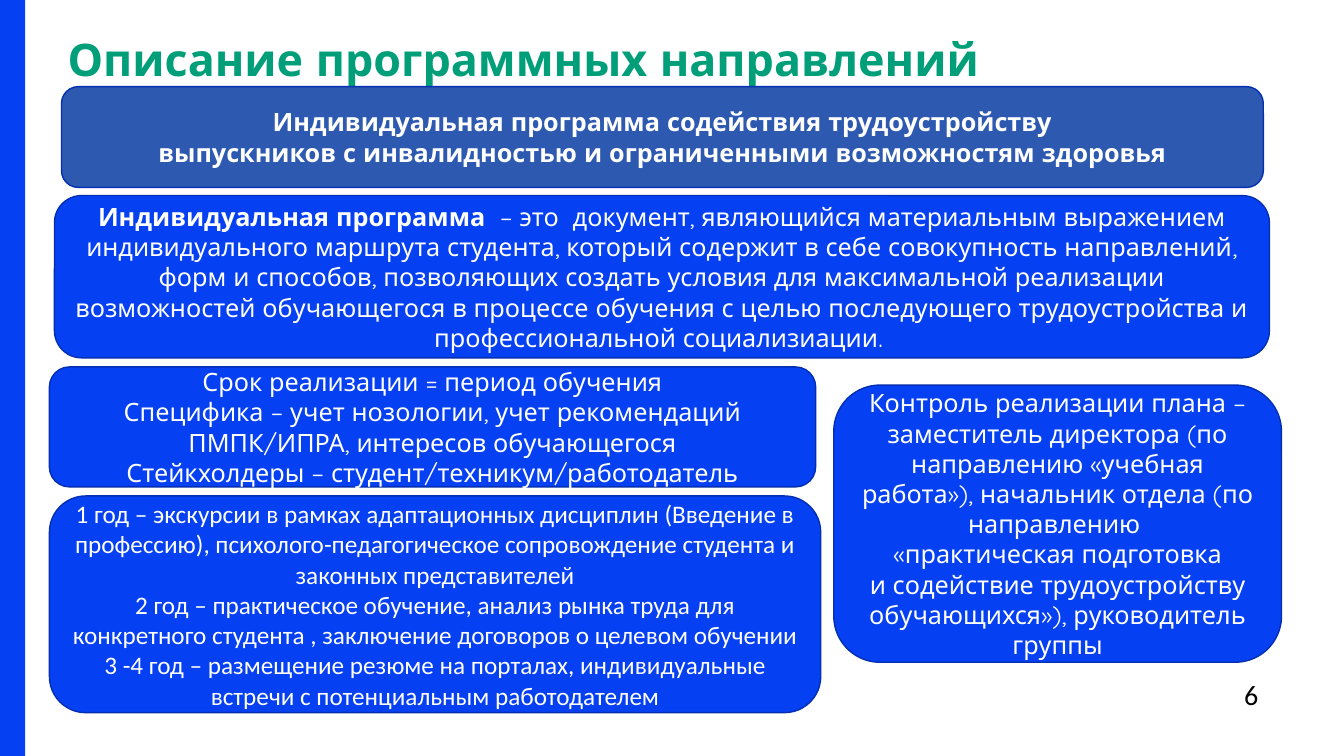
"""Build the slide on the individual employment support programme."""
from pptx import Presentation
from pptx.dml.color import RGBColor
from pptx.enum.shapes import MSO_SHAPE as SHAPE
from pptx.enum.text import MSO_ANCHOR as ANCHOR, PP_ALIGN as ALIGN
from pptx.util import Inches, Pt

BLUE = RGBColor(0x05, 0x40, 0xF2)
STEEL = RGBColor(0x2D, 0x59, 0xB0)
NAVY = RGBColor(0x04, 0x2F, 0xB3)
GREEN = RGBColor(0x00, 0x9F, 0x79)
WHITE = RGBColor(0xFF, 0xFF, 0xFF)
BLACK = RGBColor(0x00, 0x00, 0x00)
HEADING = "Quicksand"
BODY = "Calibri"


def add_run(p, text, font, size, color, bold=False):
    r = p.add_run()
    r.text = text
    for name, value in {"name": font, "size": Pt(size), "bold": bold}.items():
        setattr(r.font, name, value)
    r.font.color.rgb = color


def add_panel(s, shape, box, fill):
    sp = s.shapes.add_shape(shape, *map(Inches, box))
    sp.shadow.inherit = False
    sp.fill.solid()
    sp.fill.fore_color.rgb = fill
    sp.line.fill.background()
    return sp


prs = Presentation()
prs.slide_width, prs.slide_height = Inches(13.33), Inches(7.5)
s = prs.slides.add_slide(prs.slide_layouts[6])

add_panel(s, SHAPE.RECTANGLE, (0, 0, 0.25, 7.5), BLUE)

title = s.shapes.add_textbox(Inches(0.67), Inches(0.4), Inches(11.93), Inches(0.49))
tf = title.text_frame
for name, value in {"word_wrap": True, "margin_left": 0, "margin_right": 0,
                    "margin_top": 0, "margin_bottom": 0}.items():
    setattr(tf, name, value)
p = tf.paragraphs[0]
p.line_spacing = Pt(32)
add_run(p, "Описание программных направлений", HEADING, 32, GREEN, True)

number = s.shapes.add_textbox(Inches(12.24), Inches(6.67), Inches(0.53), Inches(0.44))
add_run(number.text_frame.paragraphs[0], "6", BODY, 20, BLACK)

panels = [
    ((0.61, 0.86, 11.92, 1), STEEL, HEADING, [
        [("Индивидуальная программа содействия трудоустройству", True)],
        [("выпускников с инвалидностью и ограниченными возможностям здоровья", True)],
    ]),
    ((0.54, 1.94, 12.05, 1.61), BLUE, HEADING, [
        [("Индивидуальная программа  ", True),
         ("– это  документ, являющийся материальным выражением индивидуального "
          "маршрута студента, который содержит в себе совокупность направлений, "
          "форм и способов, позволяющих создать условия для максимальной "
          "реализации возможностей обучающегося в процессе обучения с целью "
          "последующего трудоустройства и профессиональной социализиации. ", False)],
    ]),
    ((0.49, 3.64, 7.6, 1.19), BLUE, HEADING, [
        [("Срок реализации = период обучения", False)],
        [("Специфика – учет нозологии, учет рекомендаций ПМПК/ИПРА, "
          "интересов обучающегося", False)],
        [("Стейкхолдеры – студент/техникум/работодатель", False)],
    ]),
    ((0.49, 4.92, 7.65, 2.15), BLUE, BODY, [
        [("1 год – экскурсии в рамках адаптационных дисциплин (Введение в "
          "профессию), психолого-педагогическое сопровождение студента и "
          "законных представителей", False)],
        [("2 год – практическое обучение, анализ рынка труда для конкретного "
          "студента , заключение договоров о целевом обучении", False)],
        [("3 -4 год – размещение резюме на порталах, индивидуальные встречи "
          "с потенциальным работодателем", False)],
    ]),
    ((8.27, 3.82, 4.44, 2.75), BLUE, HEADING, [
        [("Контроль реализации плана – заместитель директора (по направлению "
          "«учебная работа»), начальник отдела (по направлению ", False)],
        [("«практическая подготовка", False)],
        [("и содействие трудоустройству обучающихся»), руководитель группы", False)],
    ]),
]

for box, fill, font, paragraphs in panels:
    sp = add_panel(s, SHAPE.ROUNDED_RECTANGLE, box, fill)
    sp.line.color.rgb = NAVY
    sp.line.width = Pt(1)
    tf = sp.text_frame
    tf.word_wrap = True
    tf.vertical_anchor = ANCHOR.MIDDLE
    for i, runs in enumerate(paragraphs):
        p = tf.add_paragraph() if i else tf.paragraphs[0]
        p.alignment = ALIGN.CENTER
        for text, bold in runs:
            add_run(p, text, font, 18, WHITE, bold)

prs.save("out.pptx")
